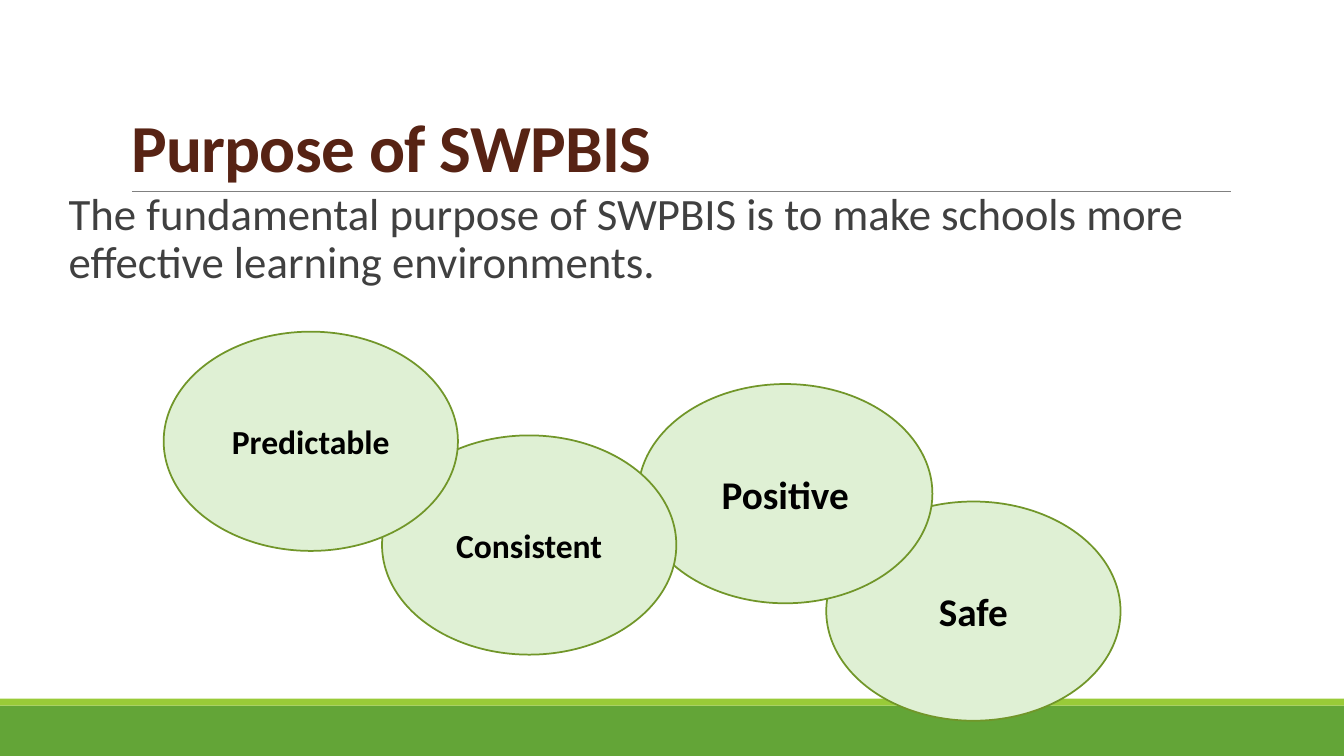
from lxml import etree
from pptx import Presentation
from pptx.dml.color import RGBColor
from pptx.enum.shapes import MSO_CONNECTOR, MSO_SHAPE
from pptx.enum.text import MSO_ANCHOR, MSO_AUTO_SIZE, PP_ALIGN
from pptx.oxml.ns import qn
from pptx.util import Pt

RECTANGLE, OVAL = MSO_SHAPE.RECTANGLE, MSO_SHAPE.OVAL
STRAIGHT = MSO_CONNECTOR.STRAIGHT
LEFT, CENTER = PP_ALIGN.LEFT, PP_ALIGN.CENTER
TOP, MIDDLE, BOTTOM = MSO_ANCHOR.TOP, MSO_ANCHOR.MIDDLE, MSO_ANCHOR.BOTTOM
NO_AUTOFIT = MSO_AUTO_SIZE.NONE

TITLE = "Purpose of SWPBIS"
STATEMENT = ("The fundamental purpose of SWPBIS is to make schools more "
             "effective learning environments.")
# word, left, top, text size; back to front
QUALITIES = [
    ("Safe", 590.2, 358.2, 28),
    ("Positive", 455.8, 274.3, 28),
    ("Consistent", 272.9, 311, 24),
    ("Predictable", 116.9, 236.9, 24),
]
OVAL_WIDTH, OVAL_HEIGHT = 210.2, 156.6
SLIDE_WIDTH, SLIDE_HEIGHT = 960, 540
# top, height, colour
FOOTER_BANDS = [(504, 36, "63A537"), (499, 5, "99CB38")]


def color(value):
    return RGBColor.from_string(value)


def add_filled(slide, kind, box, fill, outline=None):
    shape = slide.shapes.add_shape(kind, *map(Pt, box))
    shape.shadow.inherit = False
    shape.fill.solid()
    shape.fill.fore_color.rgb = color(fill)
    if outline:
        shape.line.color.rgb = color(outline)
        shape.line.width = Pt(1.25)
    else:
        shape.line.fill.background()
    return shape


def write(shape, text, size, ink, bold, align, anchor):
    frame = shape.text_frame
    frame.word_wrap = True
    frame.auto_size = NO_AUTOFIT
    frame.vertical_anchor = anchor
    para = frame.paragraphs[0]
    para.alignment = align
    span = para.add_run()
    span.text = text
    span.font.name = "Calibri"
    span.font.size = Pt(size)
    span.font.bold = bold
    span.font.color.rgb = color(ink)
    return para, span


def place(shape, left, top, width, height):
    shape.left, shape.top = Pt(left), Pt(top)
    shape.width, shape.height = Pt(width), Pt(height)


def set_blank_bullet(para):
    """Give the paragraph a hanging indent led by a space as its bullet."""
    properties = para._p.get_or_add_pPr()
    properties.set("marL", str(Pt(7.2)))
    properties.set("indent", str(Pt(-7.2)))
    bullet_color = etree.SubElement(properties, qn("a:buClr"))
    etree.SubElement(bullet_color, qn("a:srgbClr"), val="99CB38")
    etree.SubElement(properties, qn("a:buFont"), typeface="Calibri")
    etree.SubElement(properties, qn("a:buChar"), char=" ")


def main():
    deck = Presentation()
    deck.slide_width, deck.slide_height = Pt(SLIDE_WIDTH), Pt(SLIDE_HEIGHT)
    page = deck.slides.add_slide(deck.slide_layouts[1])

    for top, height, fill in FOOTER_BANDS:
        add_filled(page, RECTANGLE, (0, top, SLIDE_WIDTH, height), fill)

    rule = page.shapes.add_connector(STRAIGHT, Pt(94.3), Pt(136.8), Pt(879), Pt(136.8))
    rule.line.color.rgb = color("808080")
    rule.line.width = Pt(0.5)
    etree.SubElement(rule._element.spPr, qn("a:effectLst"))

    title = page.shapes.title
    place(title, 86.4, 22.3, 792, 114.5)
    para, span = write(title, TITLE, 48, "572314", True, LEFT, BOTTOM)
    para.line_spacing = 0.85
    span._r.get_or_add_rPr().set("spc", "-50")

    body = page.placeholders[1]
    place(body, 41.8, 133.2, 828, 342.7)
    body.text_frame.margin_left = body.text_frame.margin_right = 0
    para, span = write(body, STATEMENT, 32, "404040", False, LEFT, TOP)
    para.line_spacing = 0.9
    para.space_before, para.space_after = Pt(12), Pt(2)
    set_blank_bullet(para)

    for word, left, top, size in QUALITIES:
        oval = add_filled(page, OVAL, (left, top, OVAL_WIDTH, OVAL_HEIGHT),
                          "DFF0D4", "719629")
        write(oval, word, size, "000000", True, CENTER, MIDDLE)

    deck.save("out.pptx")


if __name__ == "__main__":
    main()
